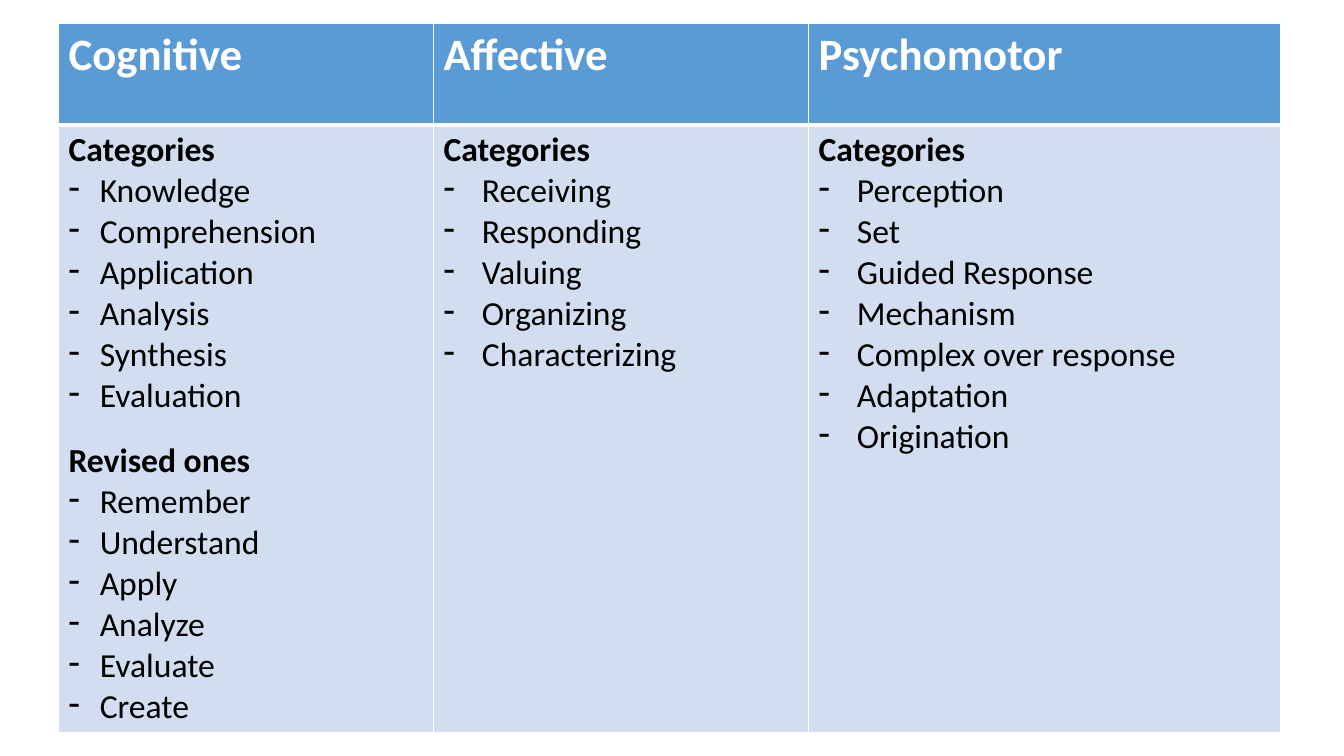
from pptx import Presentation
from pptx import util as u
from pptx.dml.color import RGBColor
from pptx.oxml import parse_xml
from pptx.oxml.ns import nsdecls

FONT = "Calibri"
WHITE, BLACK, BLUE, PALE = "FFFFFF", "000000", "5B9BD5", "D2DEEF"
COLUMN_WIDTHS = [3.72, 3.72, 4.68]
ROW_HEIGHTS = [1.01, 6.03]

# Each domain: name, list indent, then its groups of a heading and items
DOMAINS = [
    ("Cognitive", 0.31, [
        ("Categories", ["Knowledge", "Comprehension", "Application",
                        "Analysis", "Synthesis", "Evaluation"]),
        ("Revised ones", ["Remember", "Understand", "Apply",
                          "Analyze", "Evaluate", "Create"]),
    ]),
    ("Affective", 0.38, [
        ("Categories", ["Receiving", "Responding", "Valuing",
                        "Organizing", "Characterizing"]),
    ]),
    ("Psychomotor", 0.38, [
        ("Categories", ["Perception", "Set", "Guided Response", "Mechanism",
                        "Complex over response", "Adaptation", "Origination"]),
    ]),
]


def color(value):
    return RGBColor.from_string(value)


def style_cell(cell, fill, top, bottom):
    """Fill a cell and draw its white borders, widths in points."""
    cell.fill.solid()
    cell.fill.fore_color.rgb = color(fill)
    properties = cell._tc.get_or_add_tcPr()
    for place, (side, width) in enumerate(zip("LRTB", (1, 1, top, bottom))):
        properties.insert(place, parse_xml(
            f'<a:ln{side} {nsdecls("a")} w="{u.Pt(width)}"><a:solidFill>'
            f'<a:srgbClr val="{WHITE}"/></a:solidFill></a:ln{side}>'))


def add_line(frame, wording, size, ink, bold):
    """Write into the empty first paragraph, or add a new one."""
    para = frame.paragraphs[0]
    if para.runs:
        para = frame.add_paragraph()
    para.text = wording
    font = para.runs[0].font
    font.name, font.size, font.bold = FONT, u.Pt(size), bold
    font.color.rgb = color(ink)
    return para


def add_dash(para, indent):
    properties = para._p.get_or_add_pPr()
    properties.set("marL", str(u.Inches(indent)))
    properties.set("indent", str(-u.Inches(indent)))
    properties.append(parse_xml(f'<a:buChar {nsdecls("a")} char="-"/>'))


def fill_header(cell, name):
    style_cell(cell, BLUE, top=1, bottom=3)
    para = add_line(cell.text_frame, name, 32, WHITE, True)
    para.space_after = u.Pt(12)


def fill_categories(cell, groups, indent):
    style_cell(cell, PALE, top=3, bottom=1)
    for number, (heading, items) in enumerate(groups):
        para = add_line(cell.text_frame, heading, 24, BLACK, True)
        if number:
            para.space_before = u.Pt(17)
        for item in items:
            add_dash(add_line(cell.text_frame, item, 24, BLACK, False), indent)


def add_domain_table(page, left, top):
    """Place the table of learning domains at the given corner."""
    frame = page.shapes.add_table(
        len(ROW_HEIGHTS), len(DOMAINS), u.Inches(left), u.Inches(top),
        u.Inches(sum(COLUMN_WIDTHS)), u.Inches(sum(ROW_HEIGHTS)))
    table = frame.table
    for row, height in zip(table.rows, ROW_HEIGHTS):
        row.height = u.Inches(height)
    for index, (name, indent, groups) in enumerate(DOMAINS):
        table.columns[index].width = u.Inches(COLUMN_WIDTHS[index])
        fill_header(table.cell(0, index), name)
        fill_categories(table.cell(1, index), groups, indent)


def main():
    deck = Presentation()
    deck.slide_width, deck.slide_height = u.Inches(13.33), u.Inches(7.5)
    page = deck.slides.add_slide(deck.slide_layouts[6])
    add_domain_table(page, 0.58, 0.23)
    deck.save("out.pptx")


if __name__ == "__main__":
    main()
